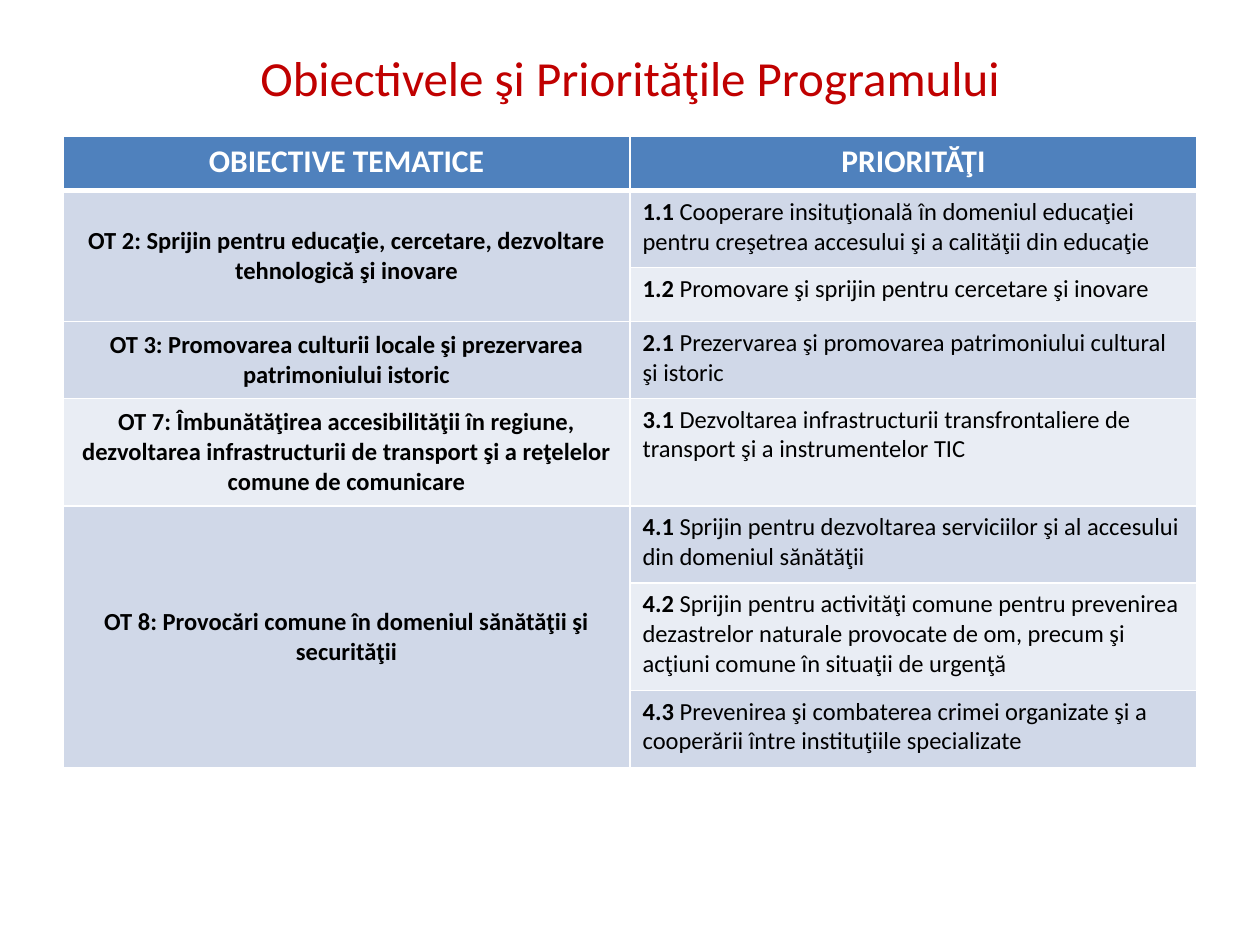
from lxml import etree
from pptx import Presentation
from pptx import util as u
from pptx.dml import color
from pptx.enum import text
from pptx.oxml import ns

FONT = "Calibri"
WHITE, BLACK, RED, BLUE = "FFFFFF", "000000", "C00000", "4F81BD"
BANDS = ["E9EDF4", "D0D8E8"]  # even rows, odd rows
HEADINGS = ["OBIECTIVE TEMATICE", "PRIORITĂŢI"]
ROW_HEIGHTS = [31, 43.9, 31, 43.9, 61.5, 43.9, 61.5, 43.9]

# Each objective with its numbered priorities
OBJECTIVES = [
    ("OT 2: Sprijin pentru educaţie, cercetare, dezvoltare tehnologică şi inovare", [
        ("1.1", "Cooperare insituţională în domeniul educaţiei pentru creşetrea "
                "accesului şi a calităţii din educaţie"),
        ("1.2", "Promovare şi sprijin pentru cercetare şi inovare")]),
    ("OT 3: Promovarea culturii locale şi prezervarea patrimoniului istoric", [
        ("2.1", "Prezervarea şi promovarea patrimoniului cultural şi istoric")]),
    ("OT 7: Îmbunătăţirea accesibilităţii în regiune, dezvoltarea infrastructurii "
     "de transport şi a reţelelor comune de comunicare", [
        ("3.1", "Dezvoltarea infrastructurii transfrontaliere de transport şi a "
                "instrumentelor TIC")]),
    ("OT 8: Provocări comune în domeniul sănătăţii şi securităţii", [
        ("4.1", "Sprijin pentru dezvoltarea serviciilor şi al accesului din "
                "domeniul sănătăţii"),
        ("4.2", "Sprijin pentru activităţi comune pentru prevenirea dezastrelor "
                "naturale provocate de om, precum şi acţiuni comune în situaţii de urgenţă"),
        ("4.3", "Prevenirea şi combaterea crimei organizate şi a cooperării între "
                "instituţiile specializate")]),
]


def rgb(value):
    return color.RGBColor.from_string(value)


def write(frame, spans, size, ink, align=text.PP_ALIGN.LEFT):
    """Fill the first paragraph with (words, bold) spans."""
    para = frame.paragraphs[0]
    para.alignment = align
    for words, bold in spans:
        span = para.add_run()
        span.text = words
        for name, value in {"name": FONT, "size": u.Pt(size), "bold": bold}.items():
            setattr(span.font, name, value)
        span.font.color.rgb = rgb(ink)


def add_title(page, words):
    title = page.shapes.title
    place = {"left": 36, "top": 21.6, "width": 648, "height": 44.6}
    for name, value in place.items():
        setattr(title, name, u.Pt(value))
    title.text_frame.vertical_anchor = text.MSO_ANCHOR.MIDDLE
    write(title.text_frame, [(words, False)], 28, RED, text.PP_ALIGN.CENTER)


def style_cell(cell, fill, bottom=1):
    """White borders first, then the fill, as the schema orders them."""
    properties = cell._tc.get_or_add_tcPr()
    for side, width in {"L": 1, "R": 1, "T": 1, "B": bottom}.items():
        line = etree.SubElement(properties, ns.qn(f"a:ln{side}"), w=str(u.Pt(width)))
        solid = etree.SubElement(line, ns.qn("a:solidFill"))
        etree.SubElement(solid, ns.qn("a:srgbClr"), val=WHITE)
    cell.fill.solid()
    cell.fill.fore_color.rgb = rgb(fill)


def add_table(page):
    frame = page.shapes.add_table(len(ROW_HEIGHTS), 2, u.Pt(36), u.Pt(78),
                                  u.Pt(648), u.Pt(sum(ROW_HEIGHTS)))
    table = frame.table
    for row, height in zip(table.rows, ROW_HEIGHTS):
        row.height = u.Pt(height)
    for index in range(len(ROW_HEIGHTS)):
        for column in range(2):
            fill = BANDS[index % 2] if index else BLUE
            style_cell(table.cell(index, column), fill, 1 if index else 3)
    return table


def fill_table(table):
    # Heading row
    for column, words in enumerate(HEADINGS):
        write(table.cell(0, column).text_frame, [(words, True)], 18, WHITE,
              text.PP_ALIGN.CENTER)
    # Objectives span the rows of their priorities
    top = 1
    for objective, priorities in OBJECTIVES:
        cell = table.cell(top, 0)
        if len(priorities) > 1:
            cell.merge(table.cell(top + len(priorities) - 1, 0))
        cell.vertical_anchor = text.MSO_ANCHOR.MIDDLE
        write(cell.text_frame, [(objective, True)], 14, BLACK, text.PP_ALIGN.CENTER)
        for row, (number, words) in enumerate(priorities, top):
            write(table.cell(row, 1).text_frame,
                  [(number + " ", True), (words, False)], 14, BLACK)
        top += len(priorities)


def main():
    deck = Presentation()
    deck.slide_width, deck.slide_height = u.Pt(720), u.Pt(540)
    page = deck.slides.add_slide(deck.slide_layouts[5])
    add_title(page, "Obiectivele şi Priorităţile Programului")
    fill_table(add_table(page))
    deck.save("out.pptx")


if __name__ == "__main__":
    main()
